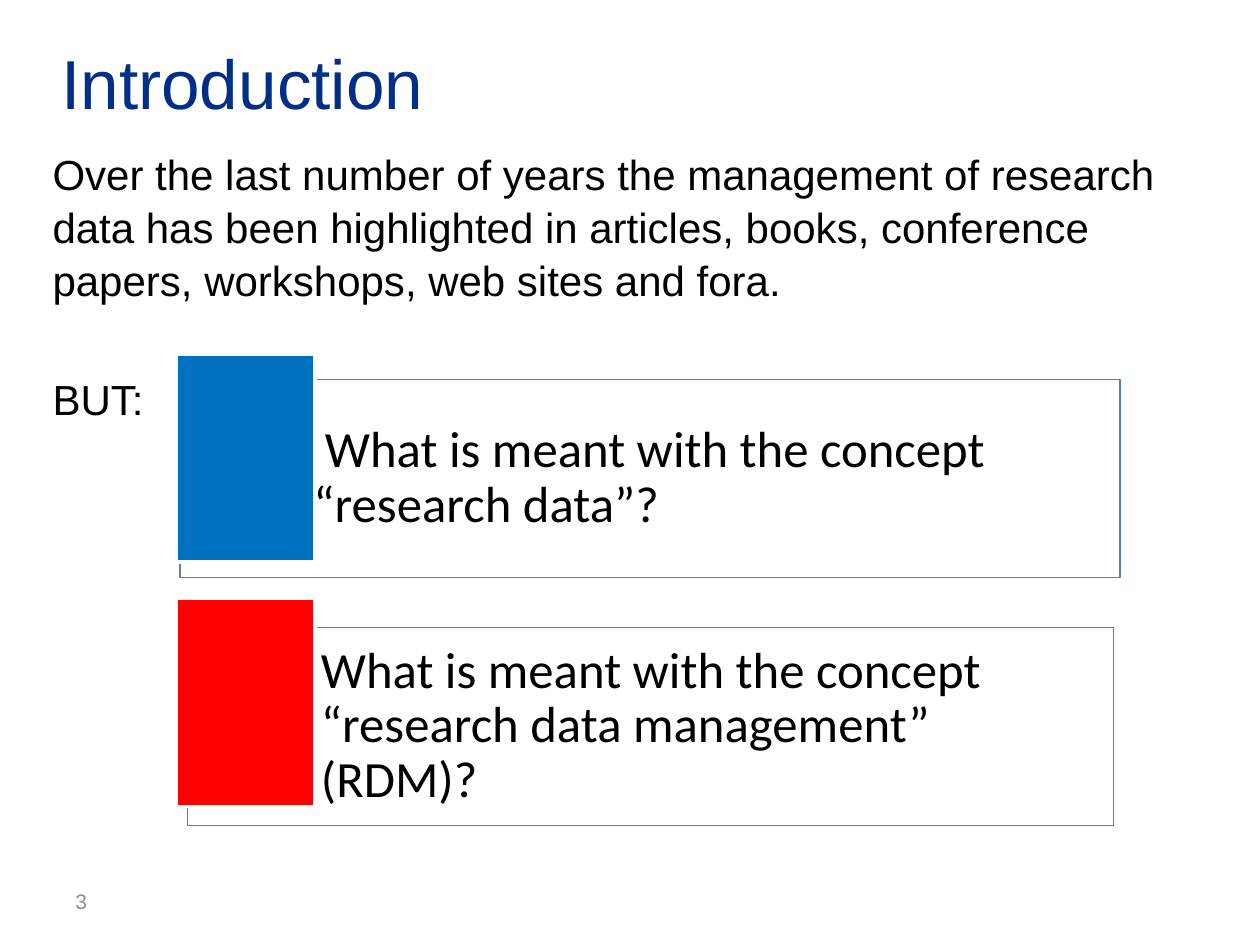
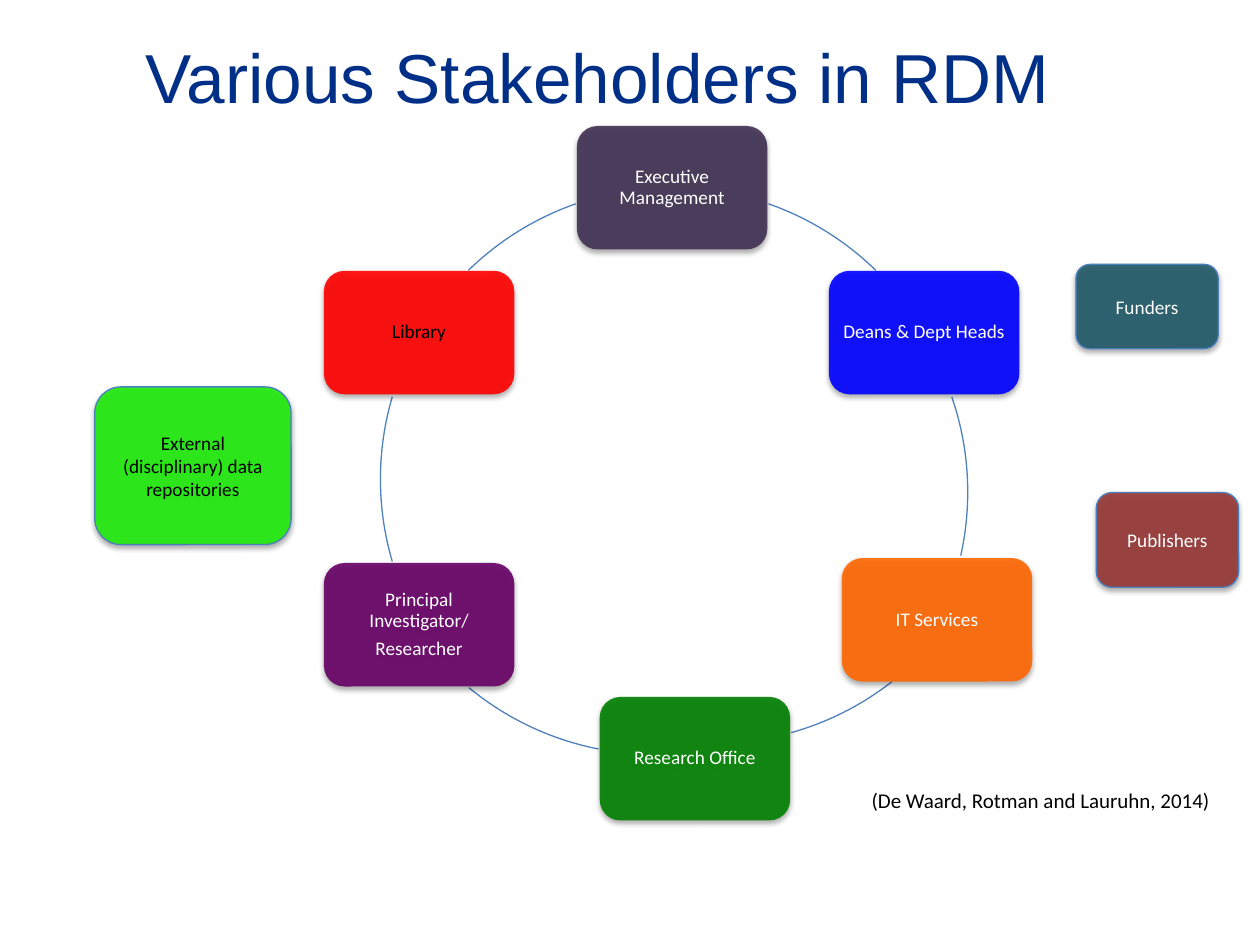
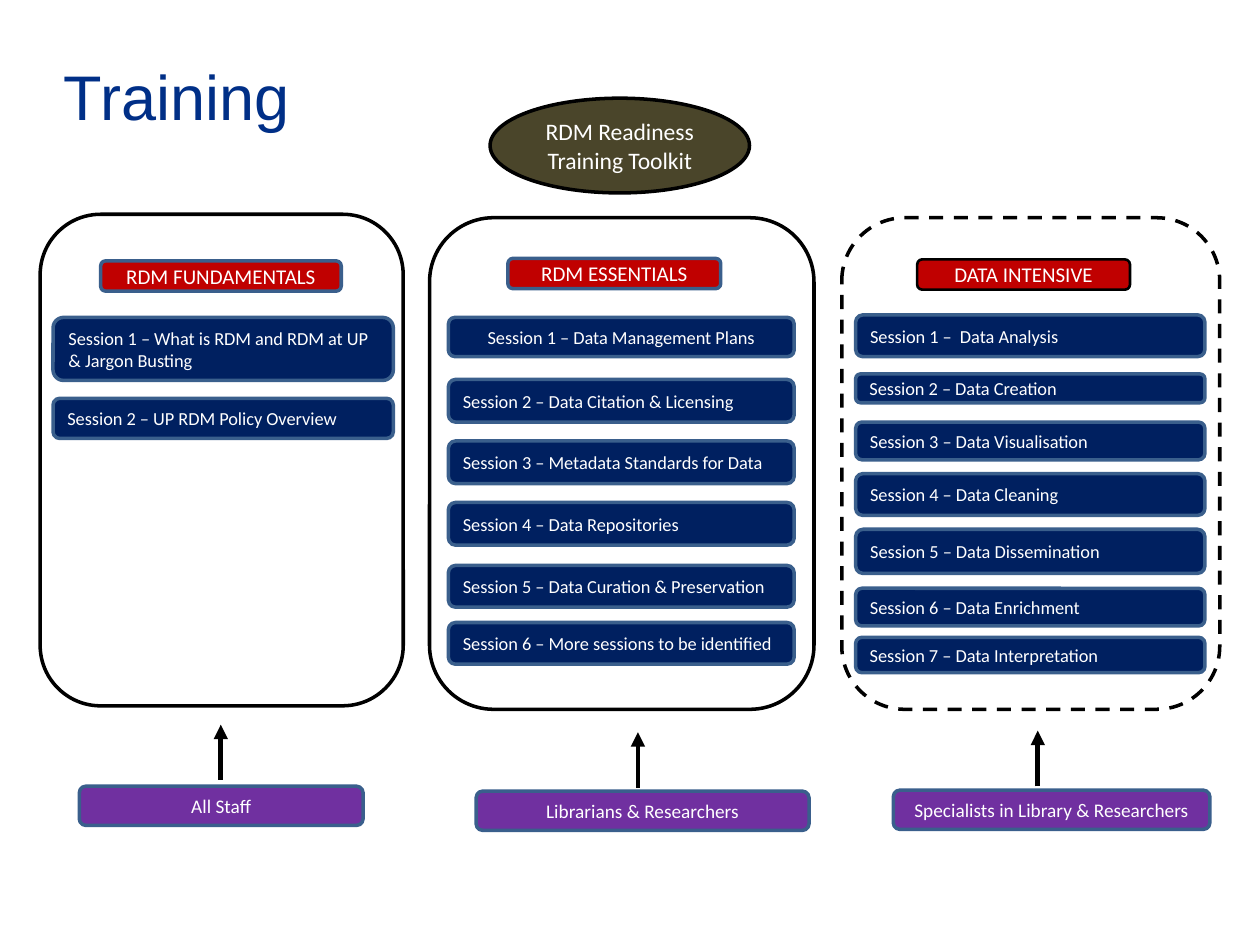
"""Build three slides on research data management: questions, stakeholders and training."""
from lxml.etree import SubElement
from pptx import Presentation
from pptx.dml.color import RGBColor
from pptx.enum.dml import MSO_LINE
from pptx.enum.shapes import MSO_CONNECTOR, MSO_SHAPE
from pptx.enum.text import MSO_ANCHOR, PP_ALIGN
from pptx.oxml.ns import qn
from pptx.util import Cm, Pt

TITLE_BLUE = RGBColor(0x00, 0x2F, 0x87)
BLACK = RGBColor(0x00, 0x00, 0x00)
WHITE = RGBColor(0xFF, 0xFF, 0xFF)
GREY = RGBColor(0x8C, 0x8C, 0x8C)
RED = RGBColor(0xFF, 0x00, 0x00)
SKY = RGBColor(0x00, 0x70, 0xC0)
ARC_BLUE = RGBColor(0x4F, 0x81, 0xBD)
EDGE_BLUE = RGBColor(0x4B, 0x7E, 0xBC)
BORDER_BLUE = RGBColor(0x3A, 0x5F, 0x8C)
PLUM = RGBColor(0x40, 0x31, 0x52)
BLUE = RGBColor(0x00, 0x00, 0xFF)
ORANGE = RGBColor(0xFF, 0x66, 0x00)
GREEN = RGBColor(0x00, 0x80, 0x00)
VIOLET = RGBColor(0x66, 0x00, 0x66)
TEAL = RGBColor(0x21, 0x59, 0x68)
BRICK = RGBColor(0x95, 0x37, 0x35)
LIME = RGBColor(0x1E, 0xEC, 0x0B)
OLIVE = RGBColor(0x4A, 0x45, 0x2A)
CRIMSON = RGBColor(0xC0, 0x00, 0x00)
NAVY = RGBColor(0x00, 0x20, 0x60)
PURPLE = RGBColor(0x70, 0x30, 0xA0)

INTRODUCTION = [
    "Over the last number of years the management of research data has been highlighted "
    "in articles, books, conference papers, workshops, web sites and fora.",
    "BUT:",
]
QUESTIONS = [
    (" What is meant with the concept “research data”?",
     (3.63, 7.65, 18.95, 3.99), SKY, 7.14),
    ("What is meant with the concept “research data management” (RDM)?",
     (3.78, 12.65, 18.67, 3.99), RED, 12.07),
]
MARKER_LEFT, MARKER_SIZE = 3.56, (2.79, 4.19)

RING_SIZE = (3.84, 2.49)
RING = [
    (["Executive Management"], (11.63, 2.54), PLUM, WHITE),
    (["Deans & Dept Heads"], (16.71, 5.46), BLUE, WHITE),
    (["IT Services"], (16.97, 11.25), ORANGE, WHITE),
    (["Research Office"], (12.09, 14.05), GREEN, WHITE),
    (["Principal Investigator/", "Researcher"], (6.53, 11.35), VIOLET, WHITE),
    (["Library"], (6.53, 5.46), RED, BLACK),
]
OUTSIDERS = [
    ("Funders", (21.69, 5.33, 2.87, 1.7), TEAL, WHITE),
    ("Publishers", (22.1, 9.93, 2.87, 1.91), BRICK, WHITE),
    ("External (disciplinary) data repositories", (1.91, 7.8, 3.96, 3.18), LIME, BLACK),
]
CIRCLE = 11.76
ARCS = [
    ((7.67, 3.78), 289.3, 314.3),
    ((7.75, 4.04), 341, 12.6),
    ((8.48, 3.23), 52, 74.3),
    ((7.32, 3.45), 101.1, 129.6),
    ((7.67, 3.78), 163.6, 196.4),
    ((7.67, 3.78), 225.7, 250.7),
]
CITATION = "(De Waard, Rotman and Lauruhn, 2014)"

COURSES = [
    {"heading": "RDM FUNDAMENTALS", "heading_at": (2.03, 5.26, 4.85, 0.61),
     "frame": (0.81, 4.32, 7.32, 9.91), "lane": (1.07, 6.86),
     "sessions": [
         ("What is RDM and RDM at UP & Jargon Busting", 6.4, 1.27),
         ("UP RDM Policy Overview", 8.03, 0.81)],
     "audience": "All Staff", "audience_at": (1.6, 15.85, 5.72, 0.79),
     "arrow": (4.45, 15.72, 14.61)},
    {"heading": "RDM ESSENTIALS", "heading_at": (10.24, 5.21, 4.29, 0.61),
     "frame": (8.66, 4.39, 7.75, 9.91), "lane": (9.04, 6.97), "first_centred": True,
     "sessions": [
         ("Data Management Plans", 6.4, 0.79),
         ("Data Citation & Licensing", 7.65, 0.86),
         ("Metadata Standards for Data", 8.89, 0.86),
         ("Data Repositories", 10.13, 0.86),
         ("Data Curation & Preservation", 11.4, 0.84),
         ("More sessions to be identified", 12.55, 0.84)],
     "audience": "Librarians & Researchers", "audience_at": (9.6, 15.95, 6.71, 0.79),
     "arrow": (12.86, 15.88, 14.76)},
    {"heading": "DATA INTENSIVE", "heading_at": (18.49, 5.23, 4.29, 0.61),
     "heading_line": (BLACK, 1.5),
     "frame": (16.97, 4.39, 7.62, 9.91), "dash": MSO_LINE.DASH, "lane": (17.25, 7.04),
     "sessions": [
         (" Data Analysis", 6.35, 0.84),
         ("Data Creation", 7.54, 0.58),
         ("Data Visualisation", 8.51, 0.76),
         ("Data Cleaning", 9.55, 0.84),
         ("Data Dissemination", 10.67, 0.89),
         ("Data Enrichment", 11.86, 0.76),
         ("Data Interpretation", 12.85, 0.71)],
     "audience": "Specialists in Library & Researchers",
     "audience_at": (18.01, 15.93, 6.38, 0.79),
     "arrow": (20.92, 15.85, 14.73)},
]


def write(holder, text, size=11, font="Calibri", color=WHITE, align=PP_ALIGN.CENTER,
          anchor=MSO_ANCHOR.MIDDLE, spacing=None, gap=0, insets=(0.25, 0.13, 0.25, 0.13)):
    frame = holder.text_frame
    frame.word_wrap = True
    frame.vertical_anchor = anchor
    (frame.margin_left, frame.margin_top,
     frame.margin_right, frame.margin_bottom) = map(Cm, insets)
    for index, line in enumerate([text] if isinstance(text, str) else text):
        paragraph = frame.add_paragraph() if index else frame.paragraphs[0]
        paragraph.alignment = align
        if spacing:
            paragraph.line_spacing = spacing
        if index and gap:
            paragraph.space_before = Pt(gap)
        run = paragraph.add_run()
        run.text = line
        run.font.size, run.font.name = Pt(size), font
        run.font.color.rgb = color


def label(slide, at, text, **style):
    write(slide.shapes.add_textbox(*map(Cm, at)), text, **{"align": PP_ALIGN.LEFT, **style})


def title(slide, at, text, size=39.6):
    label(slide, at, text, size=size, font="Arial", color=TITLE_BLUE)


def block(slide, at, kind=MSO_SHAPE.ROUNDED_RECTANGLE, fill=None, opacity=100,
          line=None, dash=None, raised=False):
    shape = slide.shapes.add_shape(kind, *map(Cm, at))
    shape.shadow.inherit = False
    properties = shape.element.spPr
    if fill is None:
        shape.fill.background()
    else:
        shape.fill.solid()
        shape.fill.fore_color.rgb = fill
        if opacity < 100:
            tint = properties.find(qn("a:solidFill"))[0]
            SubElement(tint, qn("a:alpha"), val=str(opacity * 1000))
    if line is None:
        shape.line.fill.background()
    else:
        shape.line.color.rgb, shape.line.width = line[0], Pt(line[1])
        if dash:
            shape.line.dash_style = dash
    if raised:
        shadow = SubElement(properties.find(qn("a:effectLst")), qn("a:outerShdw"),
                            blurRad=str(Pt(3.1)), dist=str(Pt(1.8)), dir="5400000",
                            rotWithShape="0")
        shade = SubElement(shadow, qn("a:srgbClr"), val=str(BLACK))
        SubElement(shade, qn("a:alpha"), val="35000")
    return shape


def arrow(slide, x, start, end):
    connector = slide.shapes.add_connector(
        MSO_CONNECTOR.STRAIGHT, Cm(x), Cm(start), Cm(x), Cm(end))
    connector.line.color.rgb, connector.line.width = BLACK, Pt(2.75)
    SubElement(connector.line._get_or_add_ln(), qn("a:tailEnd"), type="triangle")
    SubElement(connector._element.spPr, qn("a:effectLst"))


def introduction(slide):
    title(slide, (0.99, 0.66, 22.86, 1.98), "Introduction")
    label(slide, (0.81, 2.82, 23.75, 14.2), INTRODUCTION, size=24, font="Arial",
          color=BLACK, anchor=MSO_ANCHOR.TOP, spacing=1.05, gap=38)
    label(slide, (1.27, 17.65, 1.8, 1.02), "3", size=12, font="Arial", color=GREY)
    for question, at, marker, marker_top in QUESTIONS:
        panel = block(slide, at, MSO_SHAPE.RECTANGLE, WHITE, 40, (ARC_BLUE, 0.75))
        write(panel, question, size=29, color=BLACK, align=PP_ALIGN.LEFT, spacing=0.9,
              insets=(2.69, 0.3, 0.6, 0.3))
        block(slide, (MARKER_LEFT, marker_top, *MARKER_SIZE), MSO_SHAPE.RECTANGLE,
              marker, line=(WHITE, 2))


def stakeholders(slide):
    for corner, start, end in ARCS:
        arc = block(slide, (*corner, CIRCLE, CIRCLE), MSO_SHAPE.ARC, line=(ARC_BLUE, 0.75))
        arc.adjustments[0], arc.adjustments[1] = start * 0.6, end * 0.6
    for name, corner, fill, color in RING:
        member = block(slide, (*corner, *RING_SIZE), fill=fill, opacity=90, raised=True)
        write(member, name, color=color, spacing=0.9, gap=3.85, insets=(0.13,) * 4)
    for name, at, fill, color in OUTSIDERS:
        outsider = block(slide, at, fill=fill, opacity=90, line=(EDGE_BLUE, 0.75), raised=True)
        write(outsider, name, color=color)
    label(slide, (17.32, 15.75, 8, 0.76), CITATION, size=12, color=BLACK,
          anchor=MSO_ANCHOR.TOP)
    title(slide, (2.69, 0.33, 20.45, 2.39), "Various Stakeholders in RDM")


def training(slide):
    title(slide, (1.04, 1.02, 7.32, 1.8), "Training", size=36)
    toolkit = block(slide, (9.88, 1.98, 5.23, 1.91), MSO_SHAPE.OVAL, OLIVE, line=(BLACK, 2))
    write(toolkit, "RDM Readiness Training Toolkit", size=13.5)
    border = (BORDER_BLUE, 2)
    for course in COURSES:
        block(slide, course["frame"], line=(BLACK, 2), dash=course.get("dash"))
        heading = block(slide, course["heading_at"], fill=CRIMSON,
                        line=course.get("heading_line", border))
        write(heading, course["heading"], size=12)
        left, width = course["lane"]
        for number, (topic, top, height) in enumerate(course["sessions"], 1):
            session = block(slide, (left, top, width, height), fill=NAVY, line=border)
            centred = number == 1 and course.get("first_centred")
            write(session, f"Session {number} – {topic}", size=10.5,
                  align=PP_ALIGN.CENTER if centred else PP_ALIGN.LEFT)
        audience = block(slide, course["audience_at"], fill=PURPLE, line=border)
        write(audience, course["audience"])
        arrow(slide, *course["arrow"])


def main():
    deck = Presentation()
    deck.slide_width, deck.slide_height = Cm(25.4), Cm(19.05)
    for build in (introduction, stakeholders, training):
        build(deck.slides.add_slide(deck.slide_layouts[6]))
    deck.save("out.pptx")


if __name__ == "__main__":
    main()
